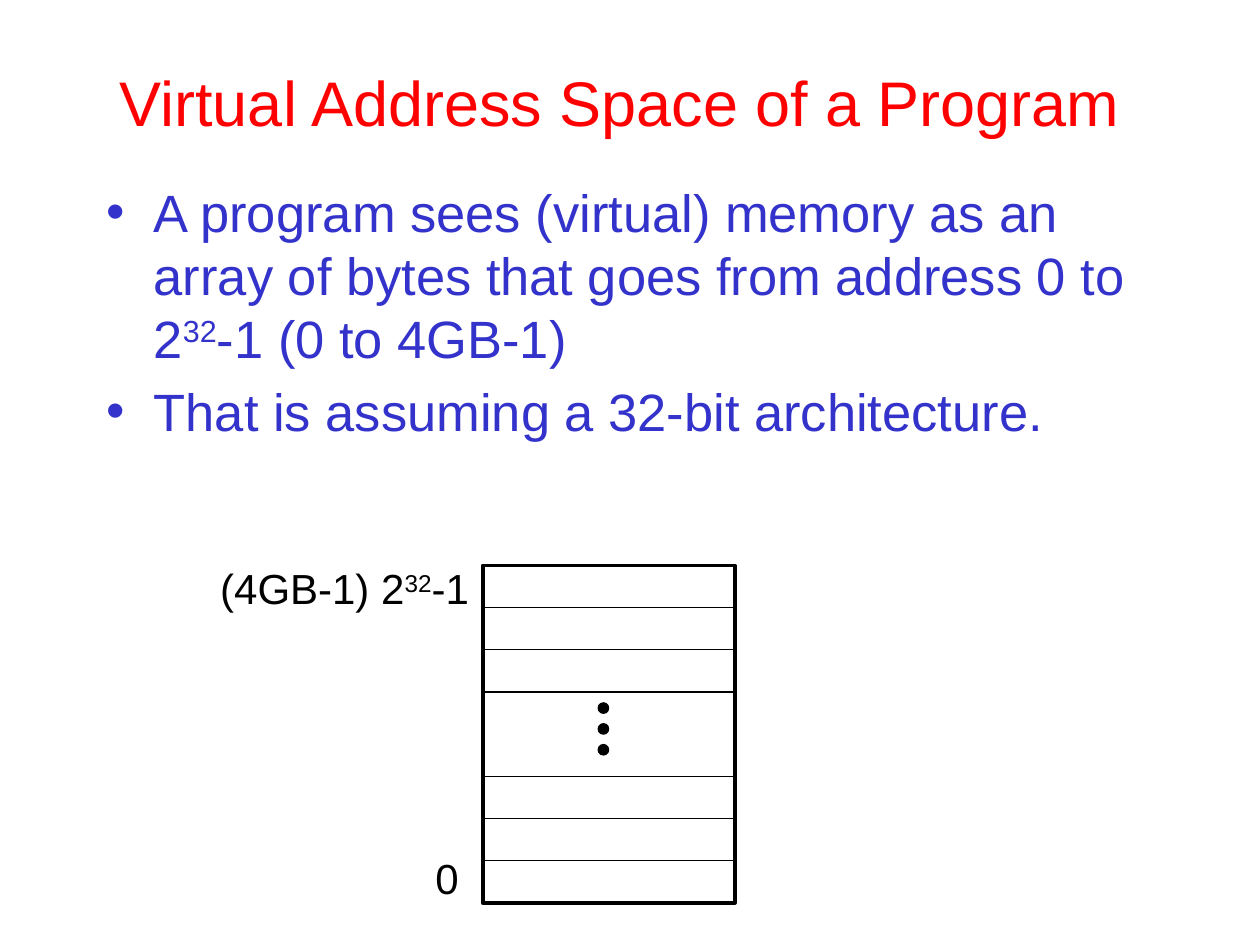
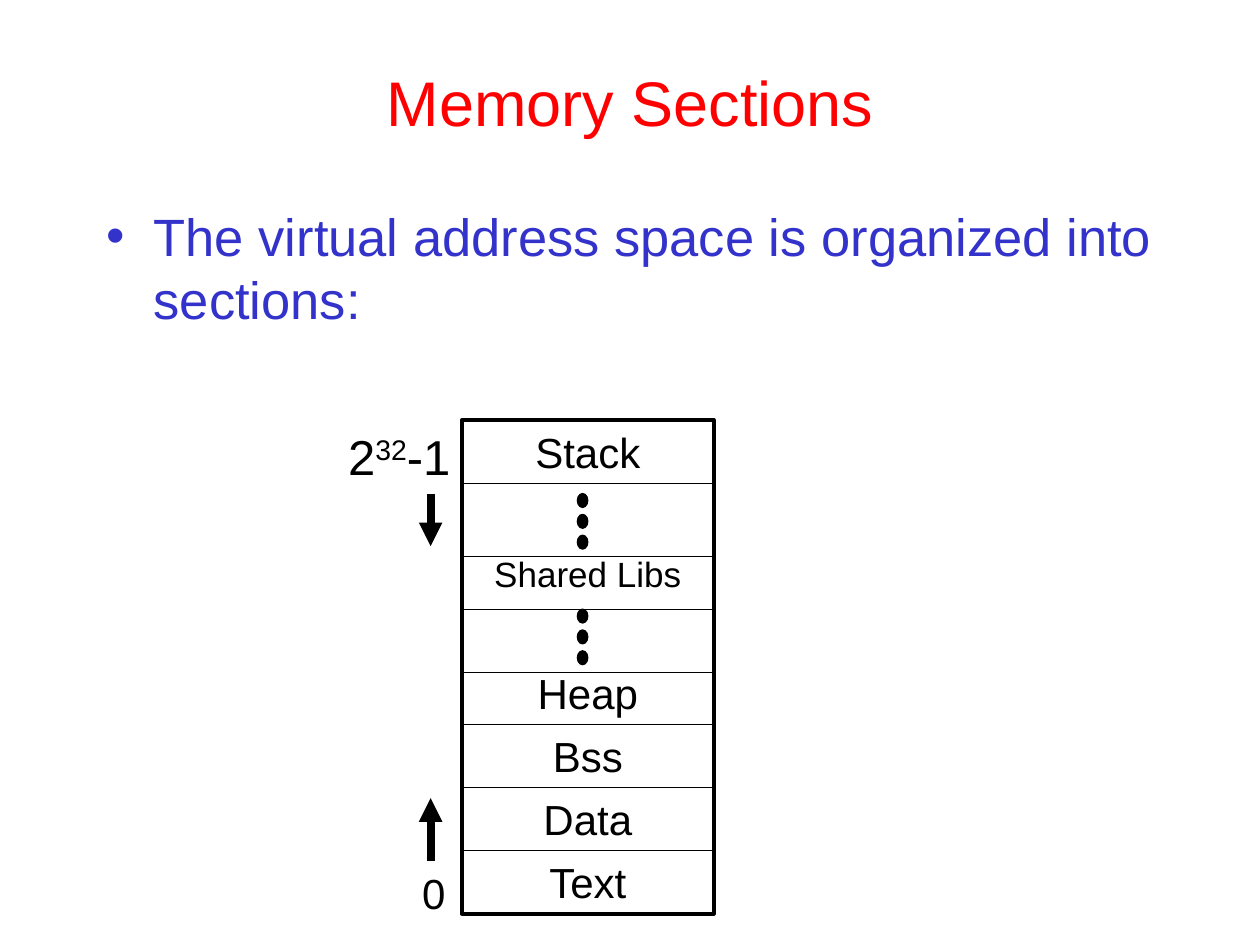
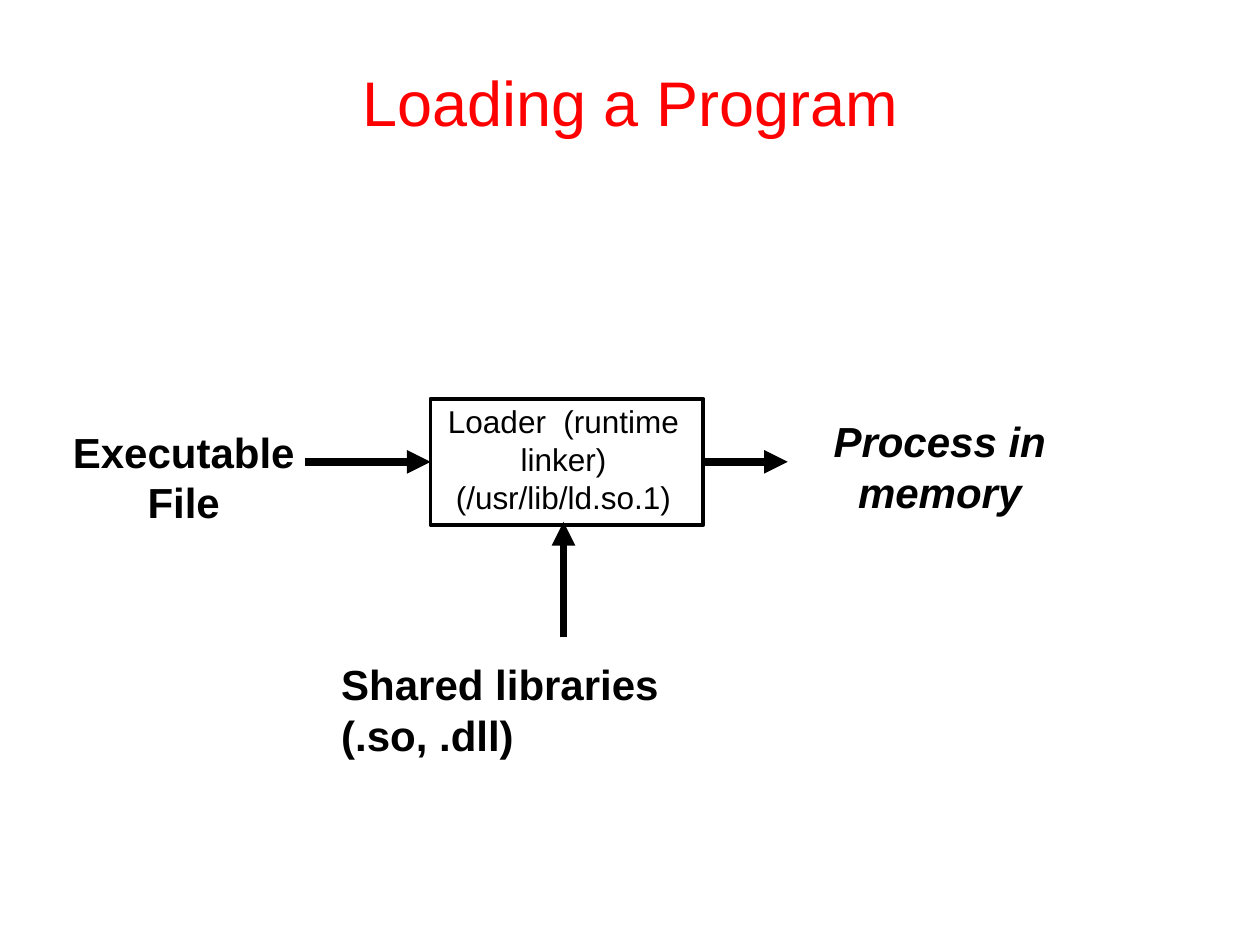
"""Build three slides on virtual memory, its sections and program loading."""
from pptx import Presentation
from pptx.dml.color import RGBColor
from pptx.enum.shapes import MSO_CONNECTOR, MSO_SHAPE
from pptx.enum.text import MSO_ANCHOR, MSO_AUTO_SIZE, PP_ALIGN
from pptx.oxml.ns import qn
from pptx.util import Cm, Pt
from lxml.etree import SubElement

COLOURS = {"title": "FF0000", "body": "3333CC", "ink": "000000", "paper": "FFFFFF"}
FONT = "Arial"
TITLE_SIZE, BODY_SIZE, LABEL_SIZE = 36, 30, 24
TITLE_BOX = (1.9, 0.46, 21.6, 3.18)
BODY_LEFT, BODY_WIDTH, BODY_HEIGHT = 1.9, 21.6, 13.25
BULLET_INDENT = 0.95
THIN, OUTLINE, ARROW = 0.75, 2.25, 4.5
DOTS = "dots"
DOT_LEFT, DOT_WIDTH, DOT_PITCH = 2.33, 0.21, 0.42
LABEL_RISE = 1.27

SLIDES = [
    {
        "title": "Virtual Address Space of a Program",
        "title_box": (0.66, 0.46, 23.67, 3.18),
        "body_top": 3.5,
        "bullets": [
            "A program sees (virtual) memory as an array of bytes that goes from "
            "address 0 to 2^32^-1 (0 to 4GB-1)",
            "That is assuming a 32-bit architecture.",
        ],
        "memory": {
            "box": (9.73, 11.4, 5.08),
            "dot_rise": 1.48,
            "dot_height": 0.21,
            "rows": [("", 0.85)] * 3 + [(DOTS, 1.7)] + [("", 0.85)] * 3,
        },
        "labels": [
            ("0", (8.53, 17.06, 1.3, 1.27), {}),
            ("(4GB-1) 2^32^-1", (4.19, 11.22, 6.78, 1.27), {}),
        ],
    },
    {
        "title": "Memory Sections",
        "body_top": 3.99,
        "bullets": ["The virtual address space is organized into sections:"],
        "memory": {
            "box": (9.31, 8.47, 5.08),
            "dot_rise": 1.27,
            "dot_height": 0.28,
            "rows": [
                ("Stack", 1.27), (DOTS, 1.48), ("Shared Libs", 1.06), (DOTS, 1.27),
                ("Heap", 1.06), ("Bss", 1.27), ("Data", 1.27), ("Text", 1.27),
            ],
            "sizes": {"Shared Libs": 20},
        },
        "arrows": [(8.68, 17.36, 8.68, 16.09), (8.68, 9.95, 8.68, 11.01)],
        "labels": [
            ("0", (8.26, 17.36, 1.27, 1.27), {}),
            ("2^32^-1", (6.77, 8.47, 3.81, 1.45), {"size": 28}),
        ],
    },
    {
        "title": "Loading a Program",
        "loader_box": (8.68, 8.04, 5.5, 2.54),
        "arrows": [
            (6.14, 9.31, 8.68, 9.31),
            (14.18, 9.31, 15.88, 9.31),
            (11.36, 12.85, 11.36, 10.52),
        ],
        "labels": [
            ("Loader  (runtime linker) (/usr/lib/ld.so.1)", (8.29, 7.98, 6.14, 2.54),
             {"size": 18, "align": PP_ALIGN.CENTER}),
            ("Executable File", (1.06, 8.47, 5.29, 2.29),
             {"bold": True, "align": PP_ALIGN.CENTER}),
            ("Process in memory", (16.3, 8.26, 5.29, 2.29),
             {"bold": True, "italic": True, "align": PP_ALIGN.CENTER}),
            ("Shared libraries\v(.so, .dll)", (6.63, 13.16, 9.68, 2.29), {"bold": True}),
        ],
    },
]


def rgb(name):
    return RGBColor.from_string(COLOURS[name])


def lengths(values):
    return [Cm(value) for value in values]


def write(paragraph, text, colour="ink", size=LABEL_SIZE, align=PP_ALIGN.LEFT, **style):
    """Fill a paragraph; parts between carets are raised."""
    paragraph.alignment = align
    for index, part in enumerate(text.split("^")):
        for line_number, line in enumerate(part.split("\v")):
            if line_number:
                paragraph.add_line_break()
            run = paragraph.add_run()
            run.text = line
            font_format = {"name": FONT, "size": Pt(size), **style}
            for attribute, value in font_format.items():
                setattr(run.font, attribute, value)
            run.font.color.rgb = rgb(colour)
            if index % 2:
                run.font._element.set("baseline", "30000")


def add_text(slide, box):
    frame = slide.shapes.add_textbox(*lengths(box)).text_frame
    frame.word_wrap = True
    return frame


def add_label(slide, text, box, style):
    write(add_text(slide, box).paragraphs[0], text, **style)


def add_title(slide, text, box):
    title = slide.shapes.title
    for attribute, value in zip(("left", "top", "width", "height"), lengths(box)):
        setattr(title, attribute, value)
    frame_format = {"word_wrap": True, "auto_size": MSO_AUTO_SIZE.NONE,
                    "vertical_anchor": MSO_ANCHOR.MIDDLE}
    for attribute, value in frame_format.items():
        setattr(title.text_frame, attribute, value)
    write(title.text_frame.paragraphs[0], text, "title", TITLE_SIZE, PP_ALIGN.CENTER)


def add_bullets(slide, bullets, top):
    frame = add_text(slide, (BODY_LEFT, top, BODY_WIDTH, BODY_HEIGHT))
    for index, bullet in enumerate(bullets):
        paragraph = frame.add_paragraph() if index else frame.paragraphs[0]
        properties = paragraph._p.get_or_add_pPr()
        properties.set("marL", str(Cm(BULLET_INDENT)))
        properties.set("indent", str(-Cm(BULLET_INDENT)))
        SubElement(properties, qn("a:buFont"), typeface=FONT)
        SubElement(properties, qn("a:buChar"), char="•")
        if index:
            paragraph.space_before = Pt(BODY_SIZE * 0.2)
        write(paragraph, bullet, "body", BODY_SIZE)


def add_figure(slide, kind, box, fill, weight):
    figure = slide.shapes.add_shape(kind, *lengths(box))
    figure.shadow.inherit = False
    figure.fill.solid()
    figure.fill.fore_color.rgb = rgb(fill)
    figure.line.color.rgb = rgb("ink")
    figure.line.width = Pt(weight)


def add_line(slide, ends, weight, arrow=False):
    line = slide.shapes.add_connector(MSO_CONNECTOR.STRAIGHT, *lengths(ends))
    line.line.color.rgb = rgb("ink")
    line.line.width = Pt(weight)
    if arrow:
        SubElement(line.line._get_or_add_ln(), qn("a:tailEnd"), type="triangle")
    SubElement(line._element.spPr, qn("a:effectLst"))


def add_memory(slide, box, rows, dot_rise, dot_height, sizes=None):
    left, top, width = box
    height = sum(row_height for _, row_height in rows)
    add_figure(slide, MSO_SHAPE.RECTANGLE, (left, top, width, height), "paper", OUTLINE)
    bottom = top
    for index, (section, row_height) in enumerate(rows):
        if index:
            add_line(slide, (left, bottom, left + width, bottom), THIN)
        bottom += row_height
        if section == DOTS:
            for dot in range(3):
                dot_top = bottom - dot_rise + dot * DOT_PITCH
                add_figure(slide, MSO_SHAPE.OVAL,
                           (left + DOT_LEFT, dot_top, DOT_WIDTH, dot_height), "ink", THIN)
        elif section:
            size = (sizes or {}).get(section, LABEL_SIZE)
            add_label(slide, section, (left, bottom - LABEL_RISE, width, LABEL_RISE),
                      {"size": size, "align": PP_ALIGN.CENTER})


def main():
    deck = Presentation()
    deck.slide_width, deck.slide_height = Cm(25.4), Cm(19.05)
    for content in SLIDES:
        slide = deck.slides.add_slide(deck.slide_layouts[5])
        add_title(slide, content["title"], content.get("title_box", TITLE_BOX))
        if "bullets" in content:
            add_bullets(slide, content["bullets"], content["body_top"])
        if "memory" in content:
            add_memory(slide, **content["memory"])
        if "loader_box" in content:
            add_figure(slide, MSO_SHAPE.RECTANGLE, content["loader_box"], "paper", OUTLINE)
        for ends in content.get("arrows", []):
            add_line(slide, ends, ARROW, arrow=True)
        for text, box, style in content["labels"]:
            add_label(slide, text, box, style)
    deck.save("out.pptx")


if __name__ == "__main__":
    main()
